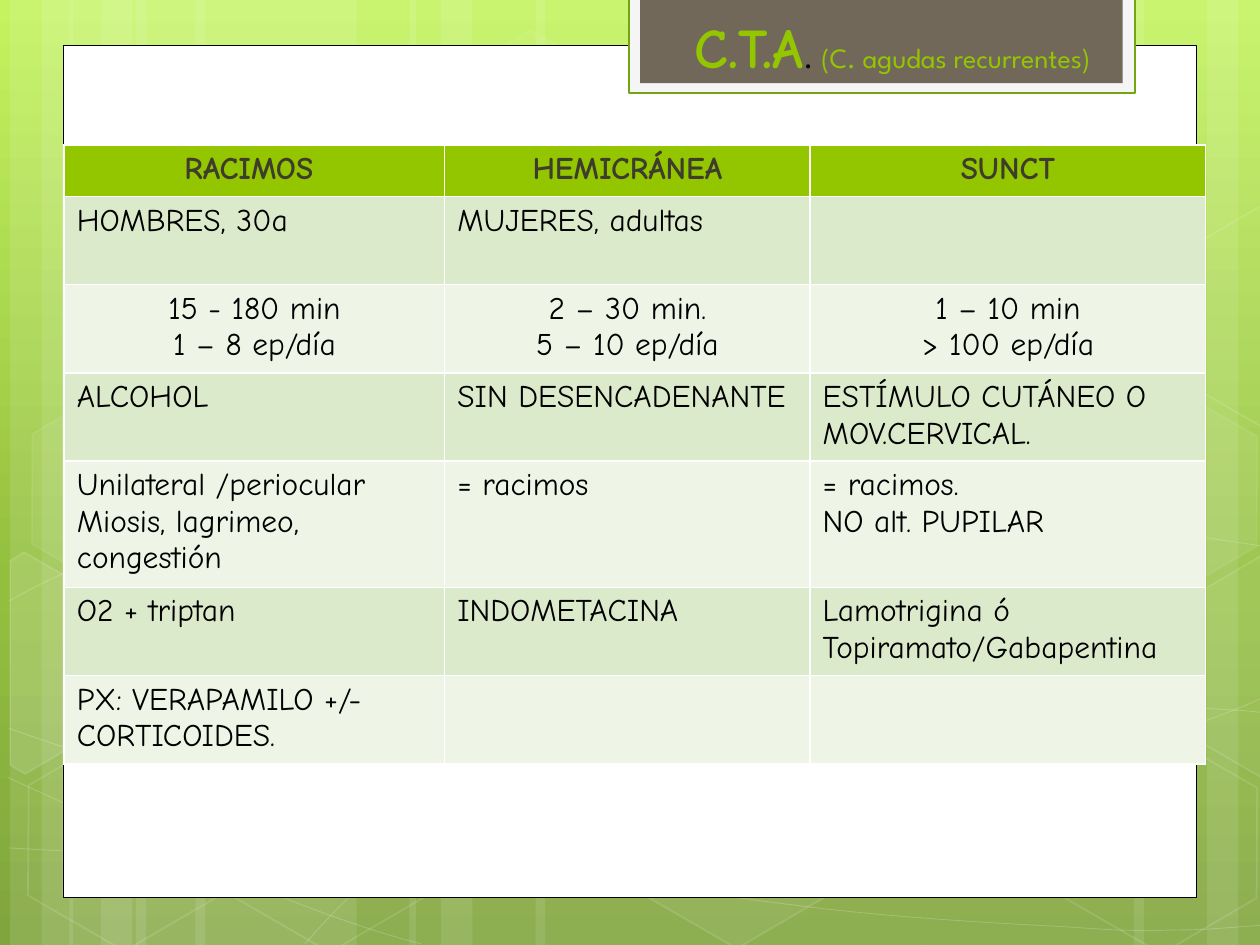
from dataclasses import dataclass
from math import cos, radians, sin
from typing import NamedTuple

from lxml import etree
from pptx import Presentation
from pptx.dml.color import RGBColor
from pptx.enum.shapes import MSO_SHAPE
from pptx.enum.text import MSO_AUTO_SIZE, PP_ALIGN
from pptx.oxml.ns import qn
from pptx.util import Inches, Pt

RECT, HEX = MSO_SHAPE.RECTANGLE, MSO_SHAPE.HEXAGON
LEFT, CENTER = PP_ALIGN.LEFT, PP_ALIGN.CENTER
FIT = MSO_AUTO_SIZE.SHAPE_TO_FIT_TEXT


@dataclass(frozen=True)
class Theme:
    white: str = "FFFFFF"
    black: str = "000000"
    lime: str = "94C600"
    edge: str = "74A510"
    pale: str = "F5F5F5"
    taupe: str = "71685A"
    ink: str = "3E3D2D"
    rows: tuple = ("EEF5E7", "DCEACC")
    sky: tuple = ((0, "C3F35F"), (0.62, "93BF3F"), (1, "81A53E"))
    hand: str = "Comic Neue"
    sans: str = "League Spartan"
    big: int = 32
    body: int = 18
    small: int = 16


class Box(NamedTuple):
    x: float
    y: float
    w: float
    h: float


class Hexa(NamedTuple):
    x: float
    y: float
    fill: int
    line: int


class Poly(NamedTuple):
    mid: tuple
    pts: list
    fill: int
    line: int


T = Theme()
TILT = 30
BANDS = [(1.08, 1.75), (0.08, 0.5), (0.33, 0.83), (1.55, 1.75), (0.55, 0.5), (0.8, 0.83),
         (7.33, 1.75), (9.58, 0.5), (9, 0.83), (4.25, 3.08), (3.25, 0.5), (3.5, 0.83)]
CURVES = [
    [(0.07, 6.73), (0.61, 6.76), (1.15, 6.79), (1.9, 6.78), (2.65, 6.77), (3.58, 6.75), (4.58, 6.65),
     (5.58, 6.55), (7, 6.36), (7.92, 6.17), (8.83, 5.98), (9.77, 5.68), (10.07, 5.51)],
    [(0.07, 4.77), (0.36, 4.61), (0.65, 4.46), (1.21, 4.31), (1.78, 4.16), (2.59, 3.94), (3.47, 3.87),
     (4.36, 3.8), (5.44, 3.79), (6.54, 3.87), (7.64, 3.95), (9.47, 4.26), (10.07, 4.34)],
    [(0.06, 6.17), (1.27, 6.72), (2.47, 7.27), (3.34, 7.49)],
    [(0.07, 5.78), (0.38, 5.89), (0.7, 6), (1.28, 6.16), (1.86, 6.31), (2.73, 6.56), (3.57, 6.73),
     (4.4, 6.9), (5.45, 7.08), (6.28, 7.18), (7.11, 7.29), (8, 7.33), (8.53, 7.36),
     (9.05, 7.4), (9.19, 7.38), (9.45, 7.38), (9.71, 7.37), (9.89, 7.35), (10.07, 7.34)],
    [(2.42, 7.49), (2.6, 7.29), (2.78, 7.09), (3.02, 6.91), (3.26, 6.73), (3.6, 6.53), (3.88, 6.39),
     (4.16, 6.25), (4.33, 6.19), (4.7, 6.09), (5.06, 5.99), (5.73, 5.85), (6.08, 5.78),
     (6.44, 5.71), (6.49, 5.71), (6.8, 5.69), (7.11, 5.66), (7.6, 5.63), (7.94, 5.62),
     (8.29, 5.61), (8.86, 5.62), (8.86, 5.62), (9.08, 5.62), (9.3, 5.62), (9.53, 5.62),
     (9.71, 5.63), (9.88, 5.64), (9.97, 5.65), (10.06, 5.66), (10.03, 5.65), (10.06, 5.66)],
]
CELLS = [
    Hexa(3.34, 0.36, 4, 8), Hexa(4.97, 5.89, 6, 12),
    Poly((0.36, 5.35), [(0.08, 4.45), (0.19, 4.38), (0.96, 4.82), (0.95, 5.7), (0.2, 6.14), (0.08, 6.07)],
         10, 12),
    Hexa(0.11, 5.91, 0, 12), Hexa(0.14, 3.12, 7, 8), Hexa(1.74, 5.92, 0, 12),
    Hexa(7.53, 4.53, 10, 12), Hexa(8.34, 5.93, 0, 12), Hexa(8.34, 3.14, 7, 8),
    Poly((9.85, 5.2), [(9.26, 4.85), (10.01, 4.41), (10.09, 4.46), (10.09, 6.13), (10.02, 6.17), (9.26, 5.73)],
         4, 12),
    Poly((9.85, 2.41), [(9.26, 2.07), (10.01, 1.63), (10.1, 1.68), (10.09, 3.35), (10.02, 3.39), (9.26, 2.95)],
         0, 12),
]
COLS = [3.02, 2.9, 3.14]
TALL = [0.41, 0.7, 0.7, 0.7, 1, 0.7, 0.7]
TABLE = [
    ["RACIMOS ", "HEMICRÁNEA", "SUNCT"],
    ["HOMBRES, 30a", "MUJERES, adultas", ""],
    ["15 - 180 min\n1 – 8 ep/día", "2 – 30 min.\n5 – 10 ep/día", "1 – 10 min\n> 100 ep/día"],
    ["ALCOHOL", "SIN DESENCADENANTE", "ESTÍMULO CUTÁNEO O MOV.CERVICAL."],
    ["Unilateral /periocular\nMiosis, lagrimeo, congestión", "= racimos", "= racimos.\nNO alt. PUPILAR"],
    ["O2 + triptan", "INDOMETACINA", "Lamotrigina ó\nTopiramato/Gabapentina"],
    ["PX: VERAPAMILO +/- CORTICOIDES.", "", ""],
]


def rgb(code: str) -> RGBColor:
    return RGBColor.from_string(code)


def tint(fill, code: str, alpha: int = 100) -> None:
    if not alpha:
        fill.background()
        return
    fill.solid()
    fill.fore_color.rgb = rgb(code)
    if alpha < 100:
        node = fill._xPr.find(qn("a:solidFill"))[0]
        etree.SubElement(node, qn("a:alpha"), val=str(alpha * 1000))


def style(shape, fill: str, alpha: int = 100, line: str = "", width: float = 0, fade: int = 100) -> None:
    shape.shadow.inherit = False
    tint(shape.fill, fill, alpha)
    tint(shape.line.fill, line, fade if line else 0)
    if line:
        shape.line.width = Pt(width)


def block(slide, box: Box, fill: str, **look) -> None:
    style(slide.shapes.add_shape(RECT, *map(Inches, box)), fill, **look)


def trace(slide, pts: list, close: bool):
    path = slide.shapes.build_freeform(Inches(pts[0][0]), Inches(pts[0][1]))
    path.add_line_segments([(Inches(x), Inches(y)) for x, y in pts[1:]], close=close)
    return path.convert_to_shape()


def curve(slide, knots: list) -> None:
    shape = trace(slide, knots, False)
    route = shape._element.find(".//" + qn("a:path"))
    legs = route.findall(qn("a:lnTo"))
    for i in range(0, len(legs), 3):
        bend = etree.SubElement(route, qn("a:cubicBezTo"))
        for leg in legs[i:i + 3]:
            bend.append(leg[0])
            route.remove(leg)
    style(shape, T.white, 0, line=T.white, width=0.5, fade=20)


def turn(pts: list, mid: tuple, angle: float) -> list:
    c, s = cos(radians(angle)), sin(radians(angle))
    rel = [(x - mid[0], y - mid[1]) for x, y in pts]
    return [(mid[0] + x * c - y * s, mid[1] + x * s + y * c) for x, y in rel]


def comb(slide, cell: Hexa | Poly) -> None:
    if isinstance(cell, Poly):
        shape = trace(slide, turn(cell.pts, cell.mid, -TILT), True)
    else:
        shape = slide.shapes.add_shape(HEX, *map(Inches, (cell.x, cell.y, 1.75, 1.52)))
        shape.adjustments[0] = 0.285
    shape.rotation = TILT
    style(shape, T.white, cell.fill, line=T.white, width=1, fade=cell.line)


def write(para, text: str, size: int = T.body, font: str = T.hand, color: str = T.black,
          bold: bool = False, align=LEFT) -> None:
    para.alignment = align
    run = para.add_run()
    run.text = text
    run.font.size, run.font.name, run.font.bold = Pt(size), font, bold
    run.font.color.rgb = rgb(color)


def grid(slide) -> None:
    box = Box(0.51, 1.15, sum(COLS), sum(TALL))
    table = slide.shapes.add_table(len(TALL), len(COLS), *map(Inches, box)).table
    for col, width in zip(table.columns, COLS):
        col.width = Inches(width)
    for r, texts in enumerate(TABLE):
        table.rows[r].height = Inches(TALL[r])
        head = r == 0
        for c, text in enumerate(texts):
            cell = table.cell(r, c)
            tint(cell.fill, T.lime if head else T.rows[r % 2])
            for i, part in enumerate(text.split("\n") if text else []):
                para = cell.text_frame.add_paragraph() if i else cell.text_frame.paragraphs[0]
                write(para, part, color=T.ink if head else T.black, bold=head,
                      align=CENTER if r in (0, 2) else LEFT)


def title(slide) -> None:
    frame = slide.shapes.add_textbox(*map(Inches, Box(4.84, 0.05, 4.49, 0.64))).text_frame
    frame.word_wrap = True
    frame.auto_size = FIT
    para = frame.paragraphs[0]
    write(para, "C.T.A", size=T.big, color=T.lime, bold=True, align=CENTER)
    write(para, ". ", font=T.sans, align=CENTER)
    write(para, "(C. agudas recurrentes)", size=T.small, font=T.sans, color=T.lime, align=CENTER)


def sky(slide) -> None:
    fill = slide.background.fill
    fill.gradient()
    fill.gradient_angle = 270
    stops = slide.element.find(".//" + qn("a:gsLst"))
    stops.clear()
    for pos, code in T.sky:
        stop = etree.SubElement(stops, qn("a:gs"), pos=str(int(pos * 100000)))
        etree.SubElement(stop, qn("a:srgbClr"), val=code)


def main() -> None:
    """Build the slide comparing recurrent acute headaches."""
    deck = Presentation()
    deck.slide_width, deck.slide_height = Inches(10), Inches(7.5)
    slide = deck.slides.add_slide(deck.slide_layouts[6])
    sky(slide)
    for x, width in BANDS:
        block(slide, Box(x, 0, width, 7.5), T.white, alpha=10)
    for knots in CURVES:
        curve(slide, knots)
    for cell in CELLS:
        comb(slide, cell)
    block(slide, Box(0.5, 0.36, 9, 6.76), T.white, line=T.black, width=0.5)
    block(slide, Box(4.99, -0.02, 4.02, 0.76), T.pale, line=T.edge, width=1.25)
    block(slide, Box(5.08, -0.02, 3.83, 0.68), T.taupe)
    title(slide)
    grid(slide)
    deck.save("out.pptx")


if __name__ == "__main__":
    main()
